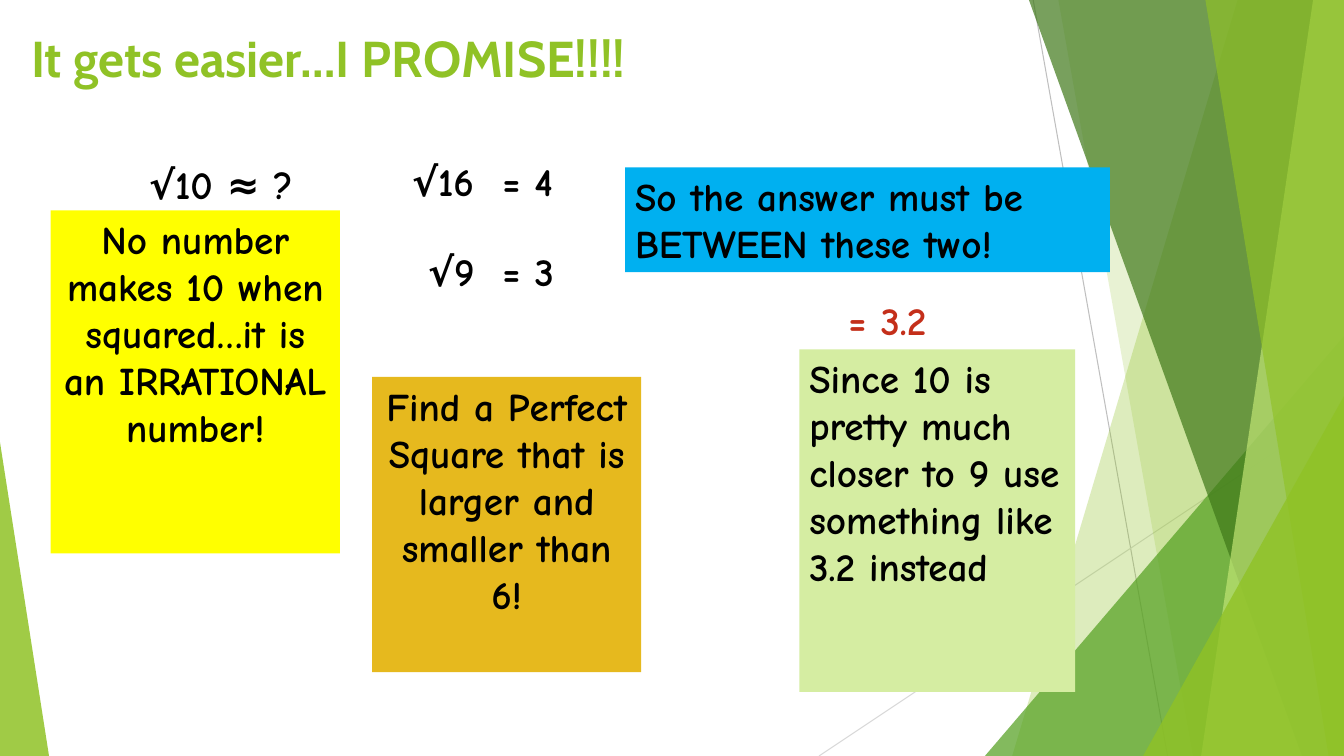
"""Builds a slide on estimating the square root of 10."""
from lxml import etree
from pptx import Presentation
from pptx.dml.color import RGBColor
from pptx.enum import shapes, text
from pptx.oxml.ns import qn
from pptx.util import Pt

WIDTH, HEIGHT = 960, 540
COLORS = {
    "lime": "90C226", "green": "54A021", "forest": "3F7819", "pale": "C0E474",
    "gray": "BFBFBF", "silver": "D9D9D9", "black": "000000", "red": "C42F1A",
    "yellow": "FFFF00", "gold": "E6B91E", "blue": "00B0F0", "mint": "D5EDA2",
}
TITLE = "It gets easier…I PROMISE!!!!"
TITLE_BOX = (15, 16, 677, 104)

RAYS = [((738, 0), (834, 540), "gray"), ((960, 290), (585, 540), "silver")]
# Each ribbon runs from its top-left and bottom-left x to the right edge.
DECOR = [
    ("ribbon", (884, 723), "lime", 30),
    ("ribbon", (756, 852), "lime", 20),
    ("triangle", (703.5, 240, 256.5, 300, 1), "green", 72),
    ("ribbon", (735, 930), "forest", 70),
    ("ribbon", (938, 858), "pale", 70),
    ("ribbon", (861, 949), "lime", 65),
    ("triangle", (816.5, 283, 143.5, 257, 1), "lime", 80),
    ("triangle", (0, 316, 35, 224, 0), "lime", 85),
]
EQUATIONS = [
    ("√10 ≈ ?", (99.4, 110.9, 160, 41), "black", None),
    ("√16\t= 4", (287.3, 108.7, 160, 41), "black", 64.5),
    ("√9\t= 3", (298.8, 172.8, 160, 41), "black", 53),
    ("= 3.2", (599, 208, 110, 41), "red", None),
]
NOTES = [
    ("No number makes 10 when squared…it is an IRRATIONAL number!",
     (36.2, 150.3, 206.6, 245), "yellow", True),
    ("Find a Perfect Square that is larger and smaller than 6!",
     (265.8, 269.2, 192.2, 211), "gold", True),
    ("So the answer must be BETWEEN these two!",
     (446.5, 119.5, 346.3, 75), "blue", False),
    ("Since 10 is pretty much closer to 9 use something like 3.2 instead",
     (571, 249.6, 197, 244.6), "mint", False),
]


def rgb(name):
    return RGBColor.from_string(COLORS[name])


def points(values):
    return [Pt(value) for value in values]


def paint(shape, color, opacity=100):
    shape.shadow.inherit = False
    shape.line.fill.background()
    shape.fill.solid()
    shape.fill.fore_color.rgb = rgb(color)
    if opacity < 100:
        tint = shape.fill._xPr.find(qn("a:solidFill"))[0]
        etree.SubElement(tint, qn("a:alpha"), val=str(opacity * 1000))


def write(shape, words, size=28, font="Comic Neue", color="black",
          centered=False, tab=None):
    frame = shape.text_frame
    frame.word_wrap = True
    frame.auto_size = text.MSO_AUTO_SIZE.NONE
    frame.vertical_anchor = text.MSO_ANCHOR.TOP
    paragraph = frame.paragraphs[0]
    paragraph.text = words
    paragraph.alignment = text.PP_ALIGN.CENTER if centered else text.PP_ALIGN.LEFT
    for run in paragraph.runs:
        run.font.size, run.font.name, run.font.bold = Pt(size), font, True
        run.font.color.rgb = rgb(color)
    if tab:
        stops = etree.SubElement(paragraph._p.get_or_add_pPr(), qn("a:tabLst"))
        etree.SubElement(stops, qn("a:tab"), pos=str(Pt(tab)), algn="l")


def add_ray(canvas, start, end, color):
    ray = canvas.add_connector(shapes.MSO_CONNECTOR.STRAIGHT,
                               *points(start + end))
    ray.line.color.rgb = rgb(color)
    ray.line.width = Pt(0.75)
    etree.SubElement(ray._element.spPr, qn("a:effectLst"))


def add_ribbon(canvas, top, bottom):
    outline = canvas.build_freeform(Pt(top), 0)
    corners = [(WIDTH, 0), (WIDTH, HEIGHT), (bottom, HEIGHT)]
    outline.add_line_segments([points(corner) for corner in corners], close=True)
    return outline.convert_to_shape()


def add_triangle(canvas, left, top, width, height, apex):
    triangle = canvas.add_shape(shapes.MSO_SHAPE.ISOSCELES_TRIANGLE,
                                *points((left, top, width, height)))
    triangle.adjustments[0] = apex
    return triangle


def main():
    deck = Presentation()
    deck.slide_width, deck.slide_height = Pt(WIDTH), Pt(HEIGHT)
    slide = deck.slides.add_slide(deck.slide_layouts[5])
    canvas = slide.shapes

    for ray in RAYS:
        add_ray(canvas, *ray)
    builders = {"ribbon": add_ribbon, "triangle": add_triangle}
    for kind, geometry, color, opacity in DECOR:
        paint(builders[kind](canvas, *geometry), color, opacity)

    title = canvas.title
    title.left, title.top, title.width, title.height = points(TITLE_BOX)
    write(title, TITLE, size=36, font="Cabin", color="lime")

    for words, box, color, tab in EQUATIONS:
        write(canvas.add_textbox(*points(box)), words, color=color, tab=tab)
    for words, box, color, centered in NOTES:
        note = canvas.add_shape(shapes.MSO_SHAPE.RECTANGLE, *points(box))
        paint(note, color)
        write(note, words, centered=centered)

    deck.save("out.pptx")


if __name__ == "__main__":
    main()
